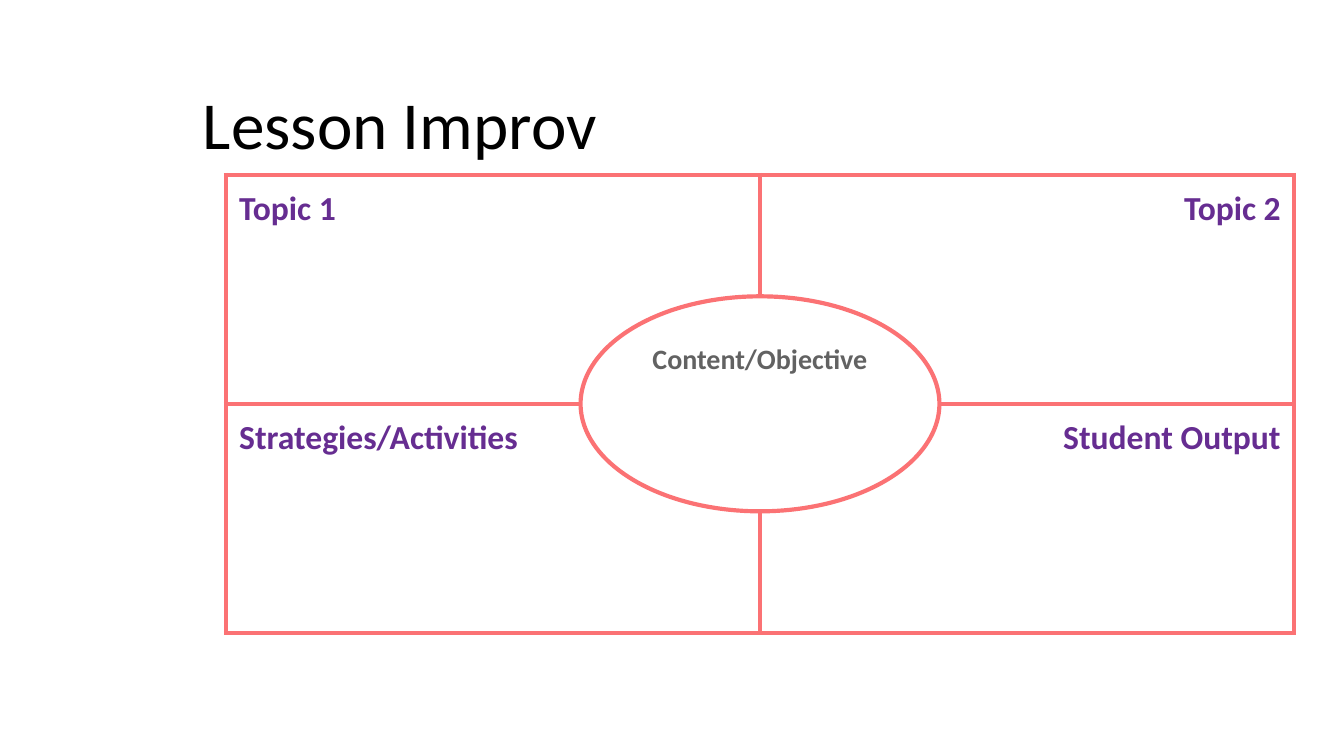
from pptx import Presentation
from pptx.dml.color import RGBColor
from pptx.enum.shapes import MSO_SHAPE as Shape
from pptx.enum.text import MSO_ANCHOR as Anchor, PP_ALIGN as Align
from pptx.oxml import parse_xml
from pptx.oxml.ns import nsdecls
from pptx.util import Inches, Pt

CORAL = "FB7274"
LINE = 2.25


def tint(code):
    return RGBColor.from_string(code)


def write(frame, text, size=18, color="662D91", bold=True, align=Align.LEFT):
    frame.word_wrap = True
    frame.margin_left = frame.margin_right = Inches(0.1)
    frame.margin_top = frame.margin_bottom = Inches(0.1)
    para = frame.paragraphs[0]
    para.alignment = align
    run = para.add_run()
    run.text = text
    run.font.name = "Calibri"
    run.font.size = Pt(size)
    run.font.bold = bold
    run.font.color.rgb = tint(color)


deck = Presentation()
deck.slide_width = Inches(10)
deck.slide_height = deck.slide_width * 9 // 16
slide = deck.slides.add_slide(deck.slide_layouts[5])

left, top = Inches(1.68), Inches(1.3)
col, row = Inches(7.95) // 2, Inches(3.41) // 2

title = slide.shapes.title
title.left, title.top = Inches(1.41), Inches(0.45)
title.width, title.height = Inches(8.22), Inches(0.92)
write(title.text_frame, "Lesson Improv", size=36, color="000000", bold=False)
title.text_frame.vertical_anchor = Anchor.MIDDLE

topics = [
    ["Topic 1", "Topic 2"],
    ["Strategies/Activities", "Student Output"],
]
grid = slide.shapes.add_table(2, 2, left, top, 2 * col, 2 * row).table
grid.first_row = grid.horz_banding = False
for r, names in enumerate(topics):
    for c, name in enumerate(names):
        cell = grid.cell(r, c)
        write(cell.text_frame, name, align=(Align.LEFT, Align.RIGHT)[c])
        cell.margin_left = cell.margin_right = Inches(0.1)
        cell.margin_top = cell.margin_bottom = Inches(0.1)
        props = cell._tc.get_or_add_tcPr()
        for side in ("lnL", "lnR", "lnT", "lnB"):
            props.append(parse_xml(
                f'<a:{side} {nsdecls("a")} w="{Pt(LINE)}"><a:solidFill>'
                f'<a:srgbClr val="{CORAL}"/></a:solidFill></a:{side}>'))
        cell.fill.background()

wide, high = Inches(2.67), Inches(1.6)
oval = slide.shapes.add_shape(
    Shape.OVAL, left + col - wide // 2, top + row - high // 2, wide, high)
oval.shadow.inherit = False
oval.fill.solid()
oval.fill.fore_color.rgb = tint("FFFFFF")
oval.line.color.rgb = tint(CORAL)
oval.line.width = Pt(LINE)
write(oval.text_frame, "Content/Objective", size=15, color="626262",
      align=Align.CENTER)
oval.text_frame.vertical_anchor = Anchor.TOP

deck.save("out.pptx")
